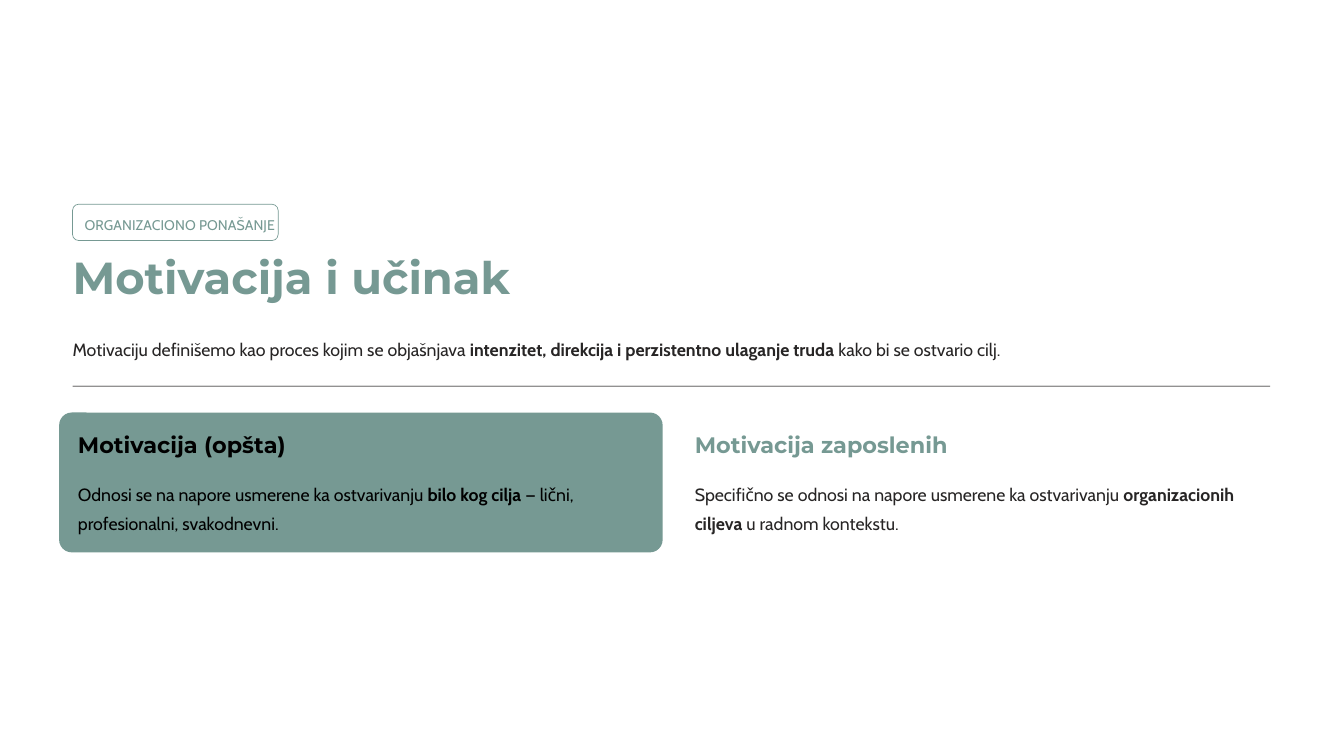
"""Build the slide on motivation and performance."""
from lxml import etree
from pptx import Presentation
from pptx import util as u
from pptx.dml.color import RGBColor
from pptx.enum import shapes, text
from pptx.oxml.ns import qn

COLORS = {"sage": "769993", "ink": "272525", "black": "000000", "white": "FFFFFF"}
FORMATS = {
    "tag": {"name": "Cabin", "size": u.Pt(7.5), "bold": False},
    "title": {"name": "Montserrat", "size": u.Pt(24), "bold": True},
    "heading": {"name": "Montserrat", "size": u.Pt(12), "bold": True},
    "body": {"name": "Cabin", "size": u.Pt(9.5), "bold": False},
}
LINE_SPACING = {"Cabin": 1.33, "Montserrat": 1.04}
FRAME = {"margin_left": 0, "margin_top": 0, "margin_right": 0, "margin_bottom": 0,
         "word_wrap": True, "auto_size": text.MSO_AUTO_SIZE.NONE,
         "vertical_anchor": text.MSO_ANCHOR.TOP}
LEFT = 0.54


def write(shape, box, style, color, runs):
    """Place a shape and fill it with runs, every second one bold."""
    for name, length in zip(("left", "top", "width", "height"), box):
        setattr(shape, name, u.Inches(length))
    for name, value in FRAME.items():
        setattr(shape.text_frame, name, value)
    paragraph = shape.text_frame.paragraphs[0]
    paragraph.alignment = text.PP_ALIGN.LEFT
    paragraph.line_spacing = LINE_SPACING[FORMATS[style]["name"]]
    for index, words in enumerate(runs):
        run = paragraph.add_run()
        run.text = words
        for name, value in FORMATS[style].items():
            setattr(run.font, name, value)
        if index % 2:
            run.font.bold = True
        run.font.color.rgb = RGBColor.from_string(COLORS[color])


def add_panel(kind, box, fill=None, radius=None):
    """Add a shape without shadow or outline, filled when a colour is given."""
    panel = slide.shapes.add_shape(kind, *map(u.Inches, box))
    panel.shadow.inherit = False
    panel.line.fill.background()
    if fill:
        panel.fill.solid()
        panel.fill.fore_color.rgb = RGBColor.from_string(COLORS[fill])
    else:
        panel.fill.background()
    if radius:
        panel.adjustments[0] = radius
    return panel


presentation = Presentation()
presentation.slide_width = u.Inches(10)
presentation.slide_height = u.Inches(10) * 9 // 16
slide = presentation.slides.add_slide(presentation.slide_layouts[5])
slide.background.fill.solid()
slide.background.fill.fore_color.rgb = RGBColor.from_string(COLORS["white"])

write(slide.shapes.title, (LEFT, 1.84, 3.89, 0.42), "title", "sage", ["Motivacija i učinak"])

tag = add_panel(shapes.MSO_SHAPE.ROUNDED_RECTANGLE, (LEFT, 1.52, 1.53, 0.27), radius=0.17)
tag.line.color.rgb = RGBColor.from_string(COLORS["sage"])
tag.line.width = u.Pt(0.38)

divider = add_panel(shapes.MSO_SHAPE.RECTANGLE, (LEFT, 2.87, 8.91, 0.01), "ink")
divider_color = divider.fill._xPr.find(qn("a:solidFill"))[0]
etree.SubElement(divider_color, qn("a:alpha"), val="50000")

add_panel(shapes.MSO_SHAPE.ROUNDED_RECTANGLE, (0.44, 3.07, 4.49, 1.04), "sage", 0.09)

texts = [
    ((0.63, 1.57, 1.86, 0.17), "tag", "sage", ["ORGANIZACIONO PONAŠANJE"]),
    ((LEFT, 2.47, 9.41, 0.22), "body", "ink",
     ["Motivaciju definišemo kao proces kojim se objašnjava ",
      "intenzitet, direkcija i perzistentno ulaganje truda",
      " kako bi se ostvario cilj."]),
]
columns = [
    (0.58, 4.22, "black", "black", "Motivacija (opšta)",
     ["Odnosi se na napore usmerene ka ostvarivanju ", "bilo kog cilja",
      " — lični, profesionalni, svakodnevni."]),
    (5.17, 4.29, "sage", "ink", "Motivacija zaposlenih",
     ["Specifično se odnosi na napore usmerene ka ostvarivanju ",
      "organizacionih ciljeva", " u radnom kontekstu."]),
]
for left, width, heading_color, body_color, heading, body in columns:
    texts.append(((left, 3.2, width, 0.21), "heading", heading_color, [heading]))
    texts.append(((left, 3.55, width, 0.43), "body", body_color, body))

for box, style, color, runs in texts:
    write(slide.shapes.add_textbox(0, 0, 0, 0), box, style, color, runs)

presentation.save("out.pptx")
